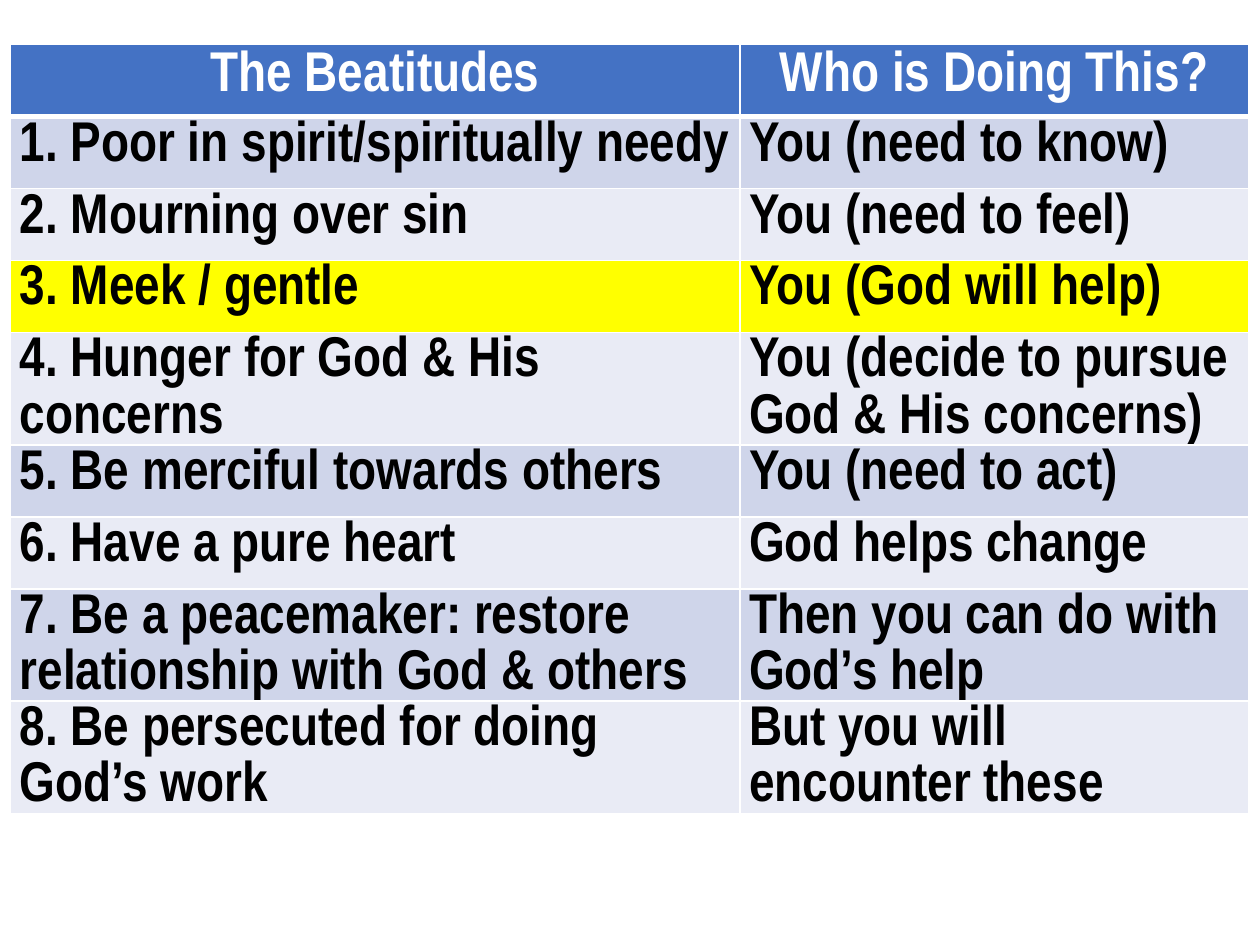
from lxml import etree
from pptx import Presentation
from pptx.dml.color import RGBColor
from pptx.enum.text import PP_ALIGN
from pptx.oxml.ns import qn
from pptx.util import Pt

CENTER, LEFT = PP_ALIGN.CENTER, PP_ALIGN.LEFT
COLORS = {"header": "4472C4", "odd": "CFD5EA", "even": "E9EBF5",
          "highlight": "FFFF00", "white": "FFFFFF", "black": "000000"}
HEADINGS = ("The Beatitudes", "Who is Doing This?")
BEATITUDES = [
    ("1. Poor in spirit/spiritually needy", "You (need to know)"),
    ("2. Mourning over sin", "You (need to feel)"),
    ("3. Meek / gentle", "You (God will help)"),
    ("4. Hunger for God & His concerns", "You (decide to pursue God & His concerns)"),
    ("5. Be merciful towards others", "You (need to act)"),
    ("6. Have a pure heart", "God helps change"),
    ("7. Be a peacemaker: restore relationship with God & others",
     "Then you can do with God’s help"),
    ("8. Be persecuted for doing God’s work", "But you will encounter these"),
]
HIGHLIGHTED_ROW = 3
COLUMN_SHARES = (0.589, 0.411)
ROW_HEIGHT = 41.14
BODY_CELL = {"margin_left": Pt(5.25), "margin_right": Pt(5.25),
             "margin_top": 0, "margin_bottom": 0}
HEADER_PARA = {"alignment": CENTER}
BODY_PARA = {"alignment": LEFT, "line_spacing": 1.07}
FONT = {"name": "Arial Narrow", "size": Pt(32), "bold": True}


def apply(target, values):
    """Set each attribute named in values on target."""
    for name, value in values.items():
        setattr(target, name, value)


def add_borders(cell, widths):
    """Draw white cell edges; must run before the fill is set."""
    properties = cell._tc.get_or_add_tcPr()
    for side, width in widths.items():
        line = etree.SubElement(properties, qn(f"a:ln{side}"), w=str(Pt(width)))
        fill = etree.SubElement(line, qn("a:solidFill"))
        etree.SubElement(fill, qn("a:srgbClr"), val=COLORS["white"])


def row_color(row):
    if row == 0:
        return COLORS["header"]
    if row == HIGHLIGHTED_ROW:
        return COLORS["highlight"]
    return COLORS["odd" if row % 2 else "even"]


def fill_cell(cell, row, text):
    is_header = row == 0
    add_borders(cell, {"L": 1, "R": 1, "T": 3 if row == 1 else 1,
                       "B": 3 if is_header else 1})
    cell.fill.solid()
    cell.fill.fore_color.rgb = RGBColor.from_string(row_color(row))
    apply(cell, {} if is_header else BODY_CELL)
    para = cell.text_frame.paragraphs[0]
    apply(para, HEADER_PARA if is_header else BODY_PARA)
    span = para.add_run()
    span.text = text
    apply(span.font, FONT)
    span.font.color.rgb = RGBColor.from_string(COLORS["white" if is_header else "black"])


def add_beatitudes_table(page, left, top, width):
    rows = [HEADINGS, *BEATITUDES]
    table = page.shapes.add_table(len(rows), len(HEADINGS), Pt(left), Pt(top),
                                  Pt(width), Pt(ROW_HEIGHT * len(rows))).table
    for column, share in zip(table.columns, COLUMN_SHARES):
        column.width = Pt(width * share)
    for row, texts in enumerate(rows):
        table.rows[row].height = Pt(ROW_HEIGHT)
        for column, text in enumerate(texts):
            fill_cell(table.cell(row, column), row, text)


def main():
    deck = Presentation()
    deck.slide_width, deck.slide_height = Pt(720), Pt(540)
    page = deck.slides.add_slide(deck.slide_layouts[6])
    add_beatitudes_table(page, left=6, top=25.5, width=707.75)
    deck.save("out.pptx")


if __name__ == "__main__":
    main()
